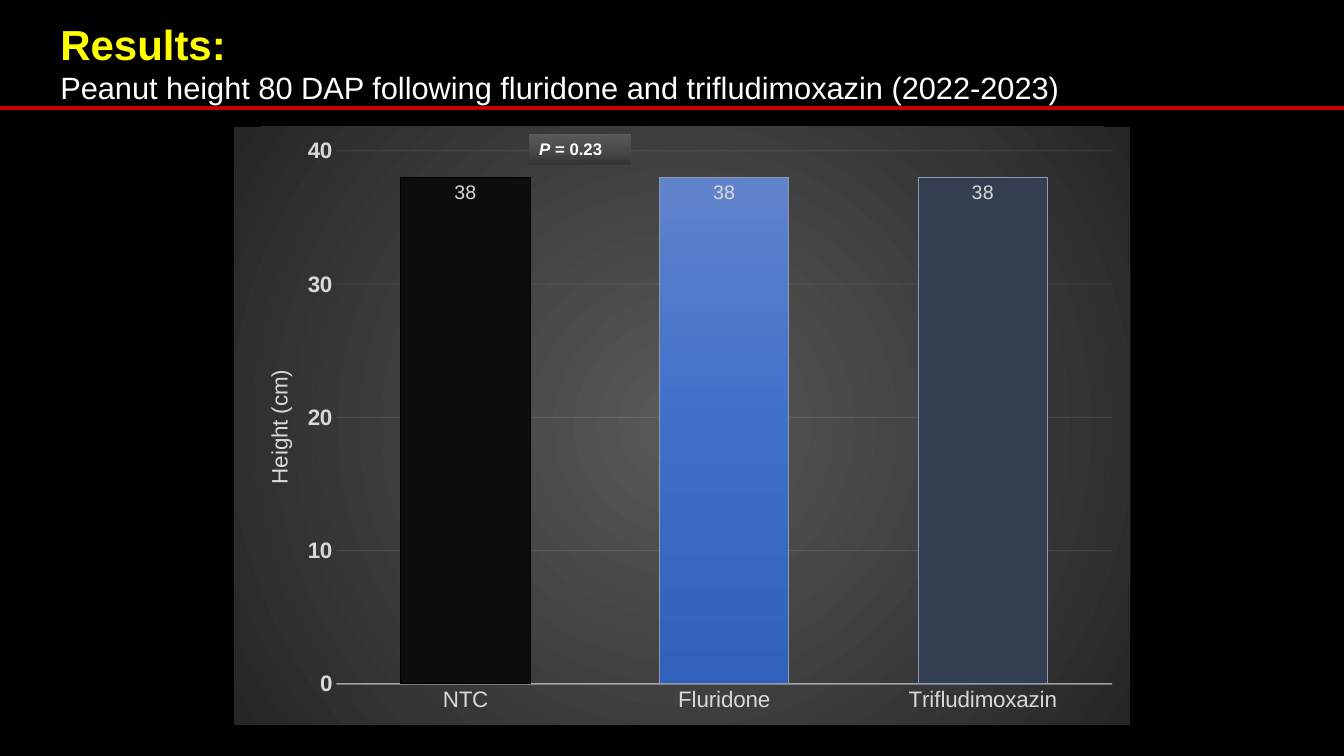
from dataclasses import dataclass

from lxml.etree import SubElement
from pptx import Presentation
from pptx.chart.axis import ValueAxis
from pptx.chart.chart import Chart
from pptx.chart.data import CategoryChartData
from pptx.dml.color import RGBColor
from pptx.dml.line import LineFormat
from pptx.enum.chart import XL_CHART_TYPE, XL_LABEL_POSITION, XL_TICK_MARK
from pptx.enum.shapes import MSO_CONNECTOR, MSO_SHAPE
from pptx.enum.text import MSO_ANCHOR, PP_ALIGN
from pptx.oxml import parse_xml
from pptx.oxml.ns import nsdecls, qn
from pptx.oxml.xmlchemy import BaseOxmlElement
from pptx.slide import Slide
from pptx.text.text import Font
from pptx.util import Cm, Pt

BLACK = RGBColor(0x00, 0x00, 0x00)
WHITE = RGBColor(0xFF, 0xFF, 0xFF)
YELLOW = RGBColor(0xFF, 0xFF, 0x00)
RED = RGBColor(0xC0, 0x00, 0x00)
NEAR_BLACK = RGBColor(0x0D, 0x0D, 0x0D)
SLATE = RGBColor(0x33, 0x3F, 0x50)
OUTLINE = RGBColor(0x8E, 0x9A, 0xAF)
LIGHT_GRAY = RGBColor(0xD9, 0xD9, 0xD9)
PALE_GRAY = RGBColor(0xF2, 0xF2, 0xF2)
BLUE_TOP = RGBColor(0x61, 0x83, 0xCB)
BLUE_MIDDLE = RGBColor(0x3E, 0x70, 0xCA)
BLUE_BOTTOM = RGBColor(0x30, 0x62, 0xBB)
GRAY_LIGHT = RGBColor(0x59, 0x59, 0x59)
GRAY_MIDDLE = RGBColor(0x4B, 0x4B, 0x4B)
GRAY_DARK = RGBColor(0x35, 0x35, 0x35)
GRAY_EDGE = RGBColor(0x26, 0x26, 0x26)
FONT_NAME = "Arial"
SLIDE_WIDTH = Cm(33.87)


@dataclass
class Gradient:
    colors: tuple[RGBColor, ...]
    angle: int | None = None


@dataclass
class Bar:
    category: str
    height: int
    fill: RGBColor | Gradient
    outline: RGBColor


@dataclass
class HeadingLine:
    text: str
    size: int
    color: RGBColor
    bold: bool


BLUE_GRADIENT = Gradient((BLUE_TOP, BLUE_MIDDLE, BLUE_BOTTOM), 90)
LABEL_GRADIENT = Gradient((GRAY_DARK, GRAY_MIDDLE, GRAY_LIGHT), 270)
CHART_GRADIENT = Gradient((GRAY_LIGHT, GRAY_EDGE))
BARS = (
    Bar("NTC", 38, NEAR_BLACK, BLACK),
    Bar("Fluridone", 38, BLUE_GRADIENT, OUTLINE),
    Bar("Trifludimoxazin", 38, SLATE, OUTLINE),
)
HEADING = (
    HeadingLine("Results:", 30, YELLOW, True),
    HeadingLine(
        "Peanut height 80 DAP following fluridone and trifludimoxazin (2022-2023)",
        22, WHITE, False,
    ),
)


def style_font(font: Font, size: int, color: RGBColor, bold: bool = False) -> None:
    font.name = FONT_NAME
    font.size = Pt(size)
    font.color.rgb = color
    font.bold = bold


def replace_fill(properties: BaseOxmlElement, gradient: Gradient) -> None:
    last = len(gradient.colors) - 1
    stops = "".join(
        f'<a:gs pos="{100000 * index // last}"><a:srgbClr val="{color}"/></a:gs>'
        for index, color in enumerate(gradient.colors)
    )
    if gradient.angle is None:
        direction = (
            '<a:path path="circle">'
            '<a:fillToRect l="50000" t="50000" r="50000" b="50000"/></a:path>'
        )
    else:
        direction = f'<a:lin ang="{gradient.angle * 60000}" scaled="0"/>'
    fill = parse_xml(
        f'<a:gradFill {nsdecls("a")} rotWithShape="1">'
        f"<a:gsLst>{stops}</a:gsLst>{direction}</a:gradFill>"
    )
    properties.replace(properties.find(qn("a:solidFill")), fill)


def style_line(line: LineFormat, width: float, opacity: int) -> None:
    line.color.rgb = PALE_GRAY
    line.width = Pt(width)
    color = line.fill._xPr.find(qn("a:solidFill"))[0]
    SubElement(color, qn("a:alpha")).set("val", str(opacity * 1000))


def manual_layout(left: float, top: float, size: tuple[float, float] | None = None) -> BaseOxmlElement:
    values = {"xMode": "edge", "yMode": "edge", "x": left, "y": top}
    if size:
        values["w"], values["h"] = size
    target = '<c:layoutTarget val="inner"/>' if size else ""
    entries = "".join(f'<c:{name} val="{value}"/>' for name, value in values.items())
    return parse_xml(
        f'<c:layout {nsdecls("c")}><c:manualLayout>{target}{entries}</c:manualLayout></c:layout>'
    )


def add_heading(slide: Slide) -> None:
    box = slide.shapes.add_textbox(0, 0, SLIDE_WIDTH, Cm(2.95))
    frame = box.text_frame
    frame.word_wrap = True
    frame.vertical_anchor = MSO_ANCHOR.MIDDLE
    frame.margin_top = Cm(0.31)
    for index, line in enumerate(HEADING):
        paragraph = frame.add_paragraph() if index else frame.paragraphs[0]
        paragraph._p.get_or_add_pPr().set("marL", str(Cm(1.27)))
        run = paragraph.add_run()
        run.text = line.text
        style_font(run.font, line.size, line.color, line.bold)


def style_value_axis(axis: ValueAxis) -> None:
    axis.minimum_scale = 0
    axis.maximum_scale = 40
    axis.major_unit = 10
    axis.has_major_gridlines = True
    style_line(axis.major_gridlines.format.line, 0.75, 10)
    axis.format.line.fill.background()
    axis.tick_labels.number_format = "0"
    axis.tick_labels.number_format_is_linked = False
    style_font(axis.tick_labels.font, 16, LIGHT_GRAY, True)
    run = axis.axis_title.text_frame.paragraphs[0].add_run()
    run.text = "Height (cm)"
    style_font(run.font, 16, LIGHT_GRAY)
    title = axis.axis_title.element
    for layout in title.findall(qn("c:layout")):
        title.remove(layout)
    title.find(qn("c:tx")).addnext(manual_layout(0.03, 0.4))


def style_bars(chart: Chart) -> None:
    plot = chart.plots[0]
    plot.gap_width = 100
    plot.overlap = -24
    plot.vary_by_categories = False
    series = plot.series[0]
    for index, bar in enumerate(BARS):
        point_format = series.points[index].format
        point_format.line.color.rgb = bar.outline
        point_format.line.width = Pt(0.75)
        point_format.fill.solid()
        if isinstance(bar.fill, Gradient):
            replace_fill(point_format.fill._xPr, bar.fill)
        else:
            point_format.fill.fore_color.rgb = bar.fill
    labels = series.data_labels
    labels.show_value = True
    labels.position = XL_LABEL_POSITION.INSIDE_END
    labels.number_format = "0"
    labels.number_format_is_linked = False
    style_font(labels.font, 14, LIGHT_GRAY)


def add_height_chart(slide: Slide) -> None:
    data = CategoryChartData()
    data.categories = [bar.category for bar in BARS]
    data.add_series("Series 1", [bar.height for bar in BARS])
    frame = slide.shapes.add_chart(
        XL_CHART_TYPE.COLUMN_CLUSTERED, Cm(5.9), Cm(3.2), Cm(22.58), Cm(15.06), data
    )
    chart = frame.chart
    chart.has_legend = False
    chart.has_title = False
    style_font(chart.font, 14, BLACK)
    for axis in (chart.category_axis, chart.value_axis):
        axis.major_tick_mark = XL_TICK_MARK.NONE
        axis.minor_tick_mark = XL_TICK_MARK.NONE
    style_font(chart.category_axis.tick_labels.font, 16, LIGHT_GRAY)
    style_line(chart.category_axis.format.line, 1, 54)
    style_value_axis(chart.value_axis)
    style_bars(chart)
    plot_area = chart.element.find(".//" + qn("c:plotArea"))
    for layout in plot_area.findall(qn("c:layout")):
        plot_area.remove(layout)
    plot_area.insert(0, manual_layout(0.114, 0.04, (0.866, 0.892)))
    background = parse_xml(
        f'<c:spPr {nsdecls("c", "a")}><a:solidFill/><a:ln><a:noFill/></a:ln></c:spPr>'
    )
    replace_fill(background, CHART_GRADIENT)
    chart.element.find(qn("c:chart")).addnext(background)


def add_red_rule(slide: Slide) -> None:
    rule = slide.shapes.add_connector(MSO_CONNECTOR.STRAIGHT, 0, Cm(2.72), SLIDE_WIDTH, Cm(2.72))
    rule.line.color.rgb = RED
    rule.line.width = Pt(3)
    SubElement(rule.element.spPr, qn("a:effectLst"))


def add_significance_label(slide: Slide) -> None:
    label = slide.shapes.add_shape(MSO_SHAPE.RECTANGLE, Cm(13.34), Cm(3.38), Cm(2.57), Cm(0.77))
    label.shadow.inherit = False
    label.line.fill.background()
    label.fill.solid()
    replace_fill(label.element.spPr, LABEL_GRADIENT)
    label.text_frame.word_wrap = True
    label.text_frame.vertical_anchor = MSO_ANCHOR.TOP
    paragraph = label.text_frame.paragraphs[0]
    paragraph.alignment = PP_ALIGN.LEFT
    for text, italic in (("P", True), (" = 0.23", False)):
        run = paragraph.add_run()
        run.text = text
        style_font(run.font, 12, WHITE, True)
        run.font.italic = italic


def main() -> None:
    presentation = Presentation()
    presentation.slide_width = SLIDE_WIDTH
    presentation.slide_height = Cm(19.05)
    slide = presentation.slides.add_slide(presentation.slide_layouts[6])
    slide.background.fill.solid()
    slide.background.fill.fore_color.rgb = BLACK
    add_heading(slide)
    add_height_chart(slide)
    add_red_rule(slide)
    add_significance_label(slide)
    presentation.save("out.pptx")


if __name__ == "__main__":
    main()
